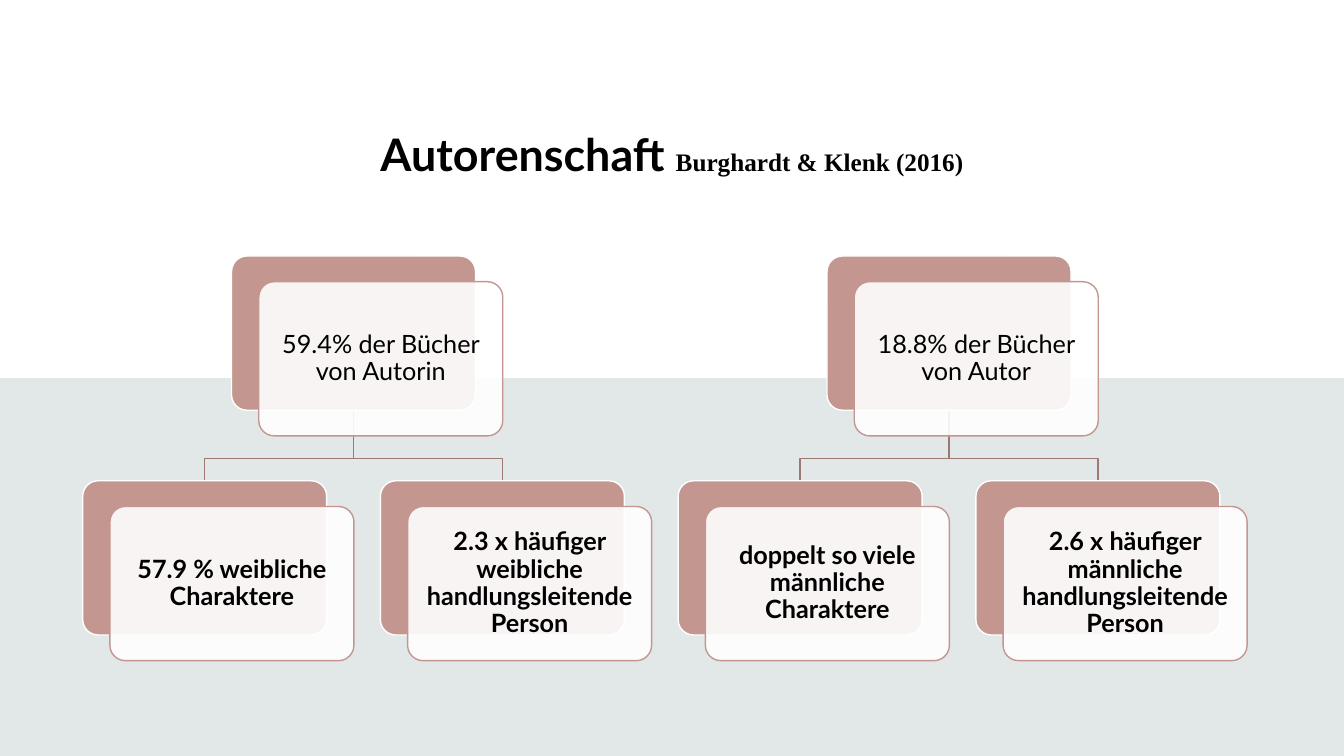
"""Builds the slide on authorship as two small trees of layered cards."""
from lxml.etree import SubElement
from pptx import Presentation
from pptx.dml.color import RGBColor
from pptx.enum.shapes import MSO_SHAPE as Shape
from pptx.enum.text import MSO_ANCHOR as Anchor, PP_ALIGN as Align
from pptx.oxml.ns import qn
from pptx.util import Inches, Pt


def paint(part, fill, line=None):
    part.shadow.inherit = False
    part.fill.solid()
    part.fill.fore_color.rgb = RGBColor.from_string(fill)
    if line:
        part.line.color.rgb = RGBColor.from_string(line)
        part.line.width = Pt(1)
    else:
        part.line.fill.background()


def style(run, size, bold, font="Lato"):
    run.font.name = font
    run.font.size = Pt(size)
    run.font.bold = bold
    run.font.color.rgb = RGBColor.from_string("000000")


ROSE, BROWN, WHITE = "C39790", "9C7973", "FFFFFF"
CARD_W, CARD_H = 2.42, 1.53
FIRST_LEFT, STEP = 0.82, 2.953
AUTHOR_TOP, FINDING_TOP, BEND = 2.54, 4.77, 4.55
OFFSET_X, OFFSET_Y = 0.27, 0.255

trees = [
    ("59.4% der Bücher von Autorin",
     ["57.9 % weibliche Charaktere",
      "2.3 x häufiger weibliche handlungsleitende Person"]),
    ("18.8% der Bücher von Autor",
     ["doppelt so viele männliche Charaktere",
      "2.6 x häufiger männliche handlungsleitende Person"]),
]

prs = Presentation()
prs.slide_width, prs.slide_height = Inches(13.33), Inches(7.5)
slide = prs.slides.add_slide(prs.slide_layouts[6])
shapes = slide.shapes

title = shapes.add_textbox(Inches(2.51), Inches(0.56), Inches(8.31), Inches(1.87)).text_frame
title.word_wrap = True
title.vertical_anchor = Anchor.MIDDLE
heading = title.paragraphs[0]
heading.alignment = Align.CENTER
heading.line_spacing = 1.1
for words, size, font in [("Autorenschaft ", 32, "Lato"),
                          ("Burghardt & Klenk (2016)", 18, "Times New Roman")]:
    run = heading.add_run()
    run.text = words
    style(run, size, True, font)

lower_half = shapes.add_shape(Shape.RECTANGLE, 0, Inches(3.75), prs.slide_width, Inches(3.75))
paint(lower_half, "E2E7E8")

cards = []
for tree, (author, findings) in enumerate(trees):
    first = FIRST_LEFT + 2 * tree * STEP
    author_left = first + STEP / 2
    cards.append((author, author_left, AUTHOR_TOP, False))
    stem = author_left + CARD_W / 2
    for column, finding in enumerate(findings):
        left = first + column * STEP
        cards.append((finding, left, FINDING_TOP, True))
        end = left + CARD_W / 2
        branch = shapes.build_freeform(Inches(stem), Inches(AUTHOR_TOP + CARD_H))
        branch.add_line_segments(
            [(Inches(x), Inches(y)) for x, y in
             [(stem, BEND), (end, BEND), (end, FINDING_TOP)]], close=False)
        link = branch.convert_to_shape()
        paint(link, WHITE, BROWN)
        link.fill.background()

for words, left, top, bold in cards:
    back = shapes.add_shape(Shape.ROUNDED_RECTANGLE, Inches(left), Inches(top),
                            Inches(CARD_W), Inches(CARD_H))
    paint(back, ROSE, WHITE)
    front = shapes.add_shape(Shape.ROUNDED_RECTANGLE, Inches(left + OFFSET_X),
                             Inches(top + OFFSET_Y), Inches(CARD_W), Inches(CARD_H))
    paint(front, WHITE, ROSE)
    front_color = front.fill._xPr.find(qn("a:solidFill"))[0]
    SubElement(front_color, qn("a:alpha"), val="90000")
    for card in (back, front):
        card.adjustments[0] = 0.1

    frame = front.text_frame
    frame.text = words
    frame.word_wrap = True
    frame.vertical_anchor = Anchor.MIDDLE
    frame.margin_left = frame.margin_right = Inches(0.07)
    frame.margin_top = frame.margin_bottom = Inches(0.07)
    label = frame.paragraphs[0]
    label.alignment = Align.CENTER
    label.line_spacing = 0.9
    style(label.runs[0], 18, bold)

prs.save("out.pptx")
